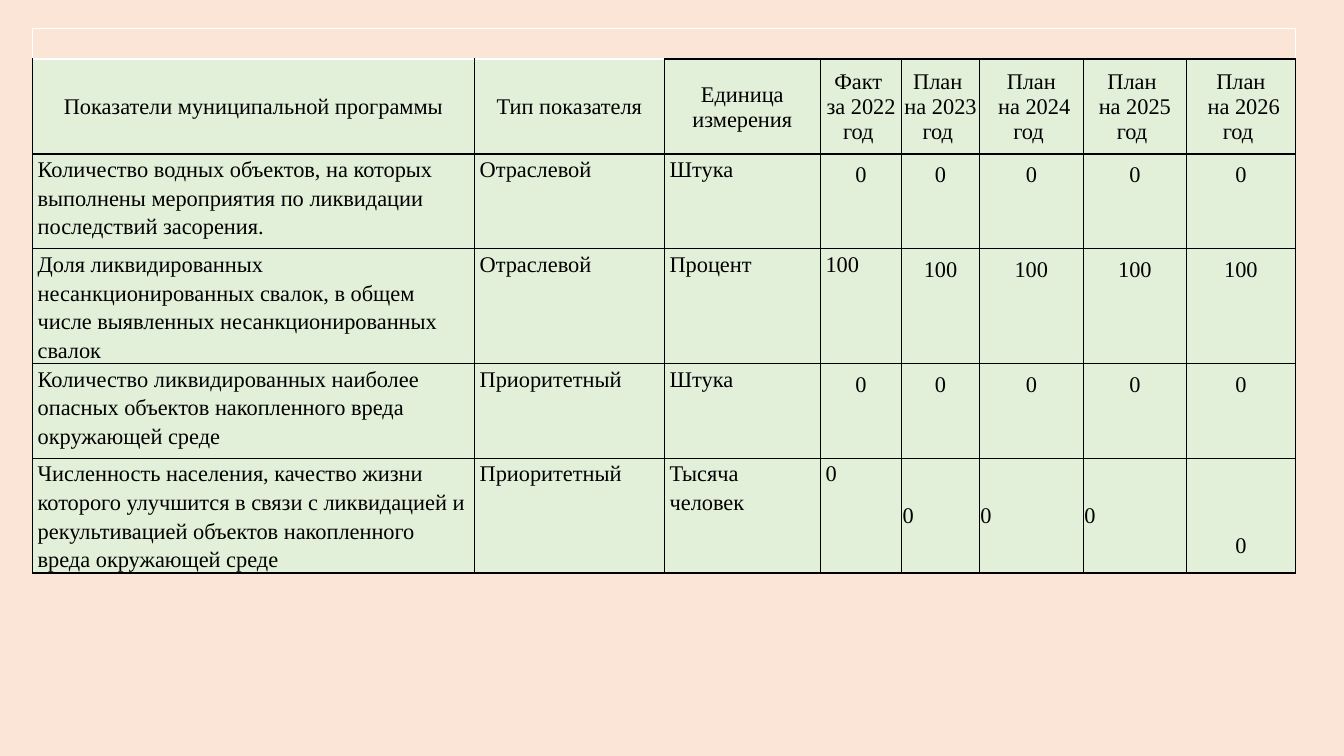
from dataclasses import dataclass

from lxml.etree import SubElement
from pptx import Presentation
from pptx.dml.color import RGBColor
from pptx.enum.text import MSO_ANCHOR, PP_ALIGN
from pptx.oxml.ns import qn
from pptx.table import Table, _Cell
from pptx.util import Pt


@dataclass(frozen=True)
class Theme:
    background: str = "FBE5D6"
    cell_fill: str = "E2F0D9"
    ink: str = "000000"
    light_line: str = "FFFFFF"
    font: str = "Times New Roman"
    text_size: float = 16
    line_width: float = 1


@dataclass(frozen=True)
class CellStyle:
    side_margin: float
    top_margin: float
    bottom_margin: float = 0
    anchor: MSO_ANCHOR = MSO_ANCHOR.TOP
    alignment: PP_ALIGN = PP_ALIGN.LEFT
    line_spacing: float = 1.0


@dataclass(frozen=True)
class Indicator:
    name: str
    kind: str
    unit: str
    values: tuple[str, ...]
    value_styles: tuple[CellStyle, ...]


THEME = Theme()
BANNER = CellStyle(0, 0)
HEADER = CellStyle(0.7, 0.7, anchor=MSO_ANCHOR.MIDDLE, alignment=PP_ALIGN.CENTER)
LABEL = CellStyle(3.75, 0, line_spacing=1.15)
VALUE = CellStyle(3, 5, 5, alignment=PP_ALIGN.CENTER, line_spacing=1.07)
SIDE_VALUE = CellStyle(0.7, 0.7, anchor=MSO_ANCHOR.MIDDLE)
LOW_VALUE = CellStyle(0.7, 54, alignment=PP_ALIGN.CENTER)

COLUMN_WIDTHS = (315.7, 135.7, 111.4, 58.2, 55.4, 74.3, 73.6, 77.9)
ROW_HEIGHTS = (21.4, 67.8, 67.8, 81.5, 67.8, 82)
HEADERS = (
    "Показатели муниципальной программы",
    "Тип показателя",
    "Единица измерения",
    "Факт \nза 2022 год ",
    "План \nна 2023 год ",
    "План\n на 2024 год ",
    "План \nна 2025 год ",
    "План\n на 2026 год ",
)
INDICATORS = (
    Indicator(
        "Количество водных объектов, на которых выполнены мероприятия "
        "по ликвидации последствий засорения.",
        "Отраслевой", "Штука", ("0",) * 5, (VALUE,) * 5,
    ),
    Indicator(
        "Доля ликвидированных несанкционированных свалок, в общем числе "
        "выявленных несанкционированных свалок",
        "Отраслевой", "Процент", ("100",) * 5, (LABEL,) + (VALUE,) * 4,
    ),
    Indicator(
        "Количество ликвидированных наиболее опасных объектов "
        "накопленного вреда окружающей среде",
        "Приоритетный", "Штука", ("0",) * 5, (VALUE,) * 5,
    ),
    Indicator(
        "Численность населения, качество жизни которого улучшится в связи "
        "с ликвидацией и рекультивацией объектов накопленного вреда "
        "окружающей среде",
        "Приоритетный", "Тысяча человек", ("0",) * 5,
        (LABEL,) + (SIDE_VALUE,) * 3 + (LOW_VALUE,),
    ),
)


def write_text(cell: _Cell, text: str, *, alignment: PP_ALIGN, line_spacing: float) -> None:
    frame = cell.text_frame
    frame.word_wrap = True
    for index, line in enumerate(text.split("\n")):
        paragraph = frame.paragraphs[0] if index == 0 else frame.add_paragraph()
        paragraph.alignment = alignment
        paragraph.line_spacing = line_spacing
        run = paragraph.add_run()
        run.text = line
        run.font.name = THEME.font
        run.font.size = Pt(THEME.text_size)
        run.font.color.rgb = RGBColor.from_string(THEME.ink)


def draw_borders(cell: _Cell, color: str, top_color: str) -> None:
    properties = cell._tc.get_or_add_tcPr()
    for side in "LRTB":
        line = SubElement(properties, qn(f"a:ln{side}"), w=str(Pt(THEME.line_width)))
        fill = SubElement(line, qn("a:solidFill"))
        SubElement(fill, qn("a:srgbClr"), val=top_color if side == "T" else color)


def format_cell(cell: _Cell, style: CellStyle, *, fill: str, line: str, top_line: str) -> None:
    cell.margin_left = cell.margin_right = Pt(style.side_margin)
    cell.margin_top = Pt(style.top_margin)
    cell.margin_bottom = Pt(style.bottom_margin)
    cell.vertical_anchor = style.anchor
    draw_borders(cell, line, top_line)
    cell.fill.solid()
    cell.fill.fore_color.rgb = RGBColor.from_string(fill)


def fill_banner(table: Table) -> None:
    for cell in table.rows[0].cells:
        format_cell(cell, BANNER, fill=THEME.background,
                    line=THEME.light_line, top_line=THEME.light_line)
    table.cell(0, 0).merge(table.cell(0, len(COLUMN_WIDTHS) - 1))


def fill_row(table: Table, row: int, texts: tuple[str, ...], styles: tuple[CellStyle, ...]) -> None:
    for column, (text, style) in enumerate(zip(texts, styles)):
        cell = table.cell(row, column)
        top_line = THEME.light_line if row == 1 and column < 2 else THEME.ink
        format_cell(cell, style, fill=THEME.cell_fill, line=THEME.ink, top_line=top_line)
        write_text(cell, text, alignment=style.alignment, line_spacing=style.line_spacing)


def main() -> None:
    presentation = Presentation()
    presentation.slide_width = Pt(960)
    presentation.slide_height = Pt(540)
    slide = presentation.slides.add_slide(presentation.slide_layouts[6])
    slide.background.fill.solid()
    slide.background.fill.fore_color.rgb = RGBColor.from_string(THEME.background)

    table = slide.shapes.add_table(
        len(ROW_HEIGHTS), len(COLUMN_WIDTHS), Pt(23.2), Pt(20.2),
        Pt(sum(COLUMN_WIDTHS)), Pt(sum(ROW_HEIGHTS)),
    ).table
    table.first_row = False
    table.horz_banding = False
    for column, width in zip(table.columns, COLUMN_WIDTHS):
        column.width = Pt(width)
    for row, height in zip(table.rows, ROW_HEIGHTS):
        row.height = Pt(height)

    fill_banner(table)
    fill_row(table, 1, HEADERS, (HEADER,) * len(HEADERS))
    for row, indicator in enumerate(INDICATORS, start=2):
        texts = (indicator.name, indicator.kind, indicator.unit) + indicator.values
        fill_row(table, row, texts, (LABEL,) * 3 + indicator.value_styles)

    presentation.save("out.pptx")


if __name__ == "__main__":
    main()
